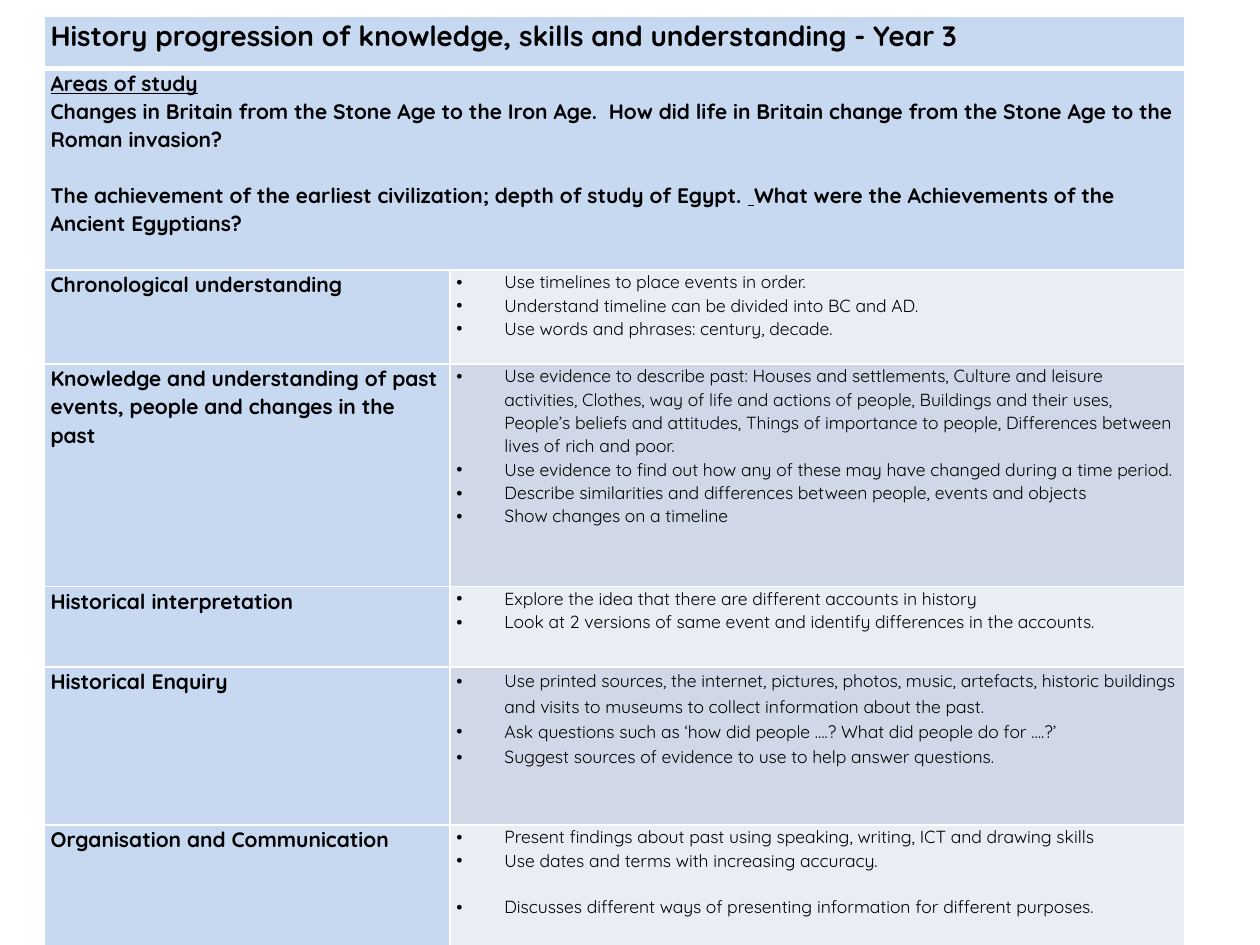
from lxml.etree import SubElement
from pptx import Presentation
from pptx.dml.color import RGBColor
from pptx.enum.text import MSO_ANCHOR, PP_ALIGN
from pptx.oxml.ns import qn
from pptx.util import Cm, Pt

COLORS = {"head": "C6D9F1", "light": "E9EDF4", "dark": "D0D8E8",
          "text": "000000", "line": "FFFFFF"}
COLS = [8.18, 14.81]
ROWS = [1.05, 4.06, 1.9, 4.48, 1.63, 3.18, 2.44]

TITLE = "History progression of knowledge, skills and understanding - Year 3"
AREAS = [
    ([("Areas of study", True)], 0),
    ([("Changes in Britain from the Stone Age to the Iron Age.  How did life in Britain "
       "change from the Stone Age to the Roman invasion?", False)], 0),
    ([("The achievement of the earliest civilization; depth of study of Egypt. ", False),
      (" ", True),
      ("What were the Achievements of the Ancient Egyptians?", False)], 16),
]
SKILLS = [
    ("Chronological understanding", [
        "Use timelines to place events in order.",
        "Understand timeline can be divided into BC and AD.",
        "Use words and phrases: century, decade."], {}),
    ("Knowledge and understanding of past events, people and changes in the past", [
        "Use evidence to describe past: Houses and settlements, Culture and leisure "
        "activities, Clothes, way of life and actions of people, Buildings and their uses, "
        "People’s beliefs and attitudes, Things of importance to people, Differences "
        "between lives of rich and poor.",
        "Use evidence to find out how any of these may have changed during a time period.",
        "Describe similarities and differences between people, events and objects",
        "Show changes on a timeline"], {}),
    ("Historical interpretation", [
        "Explore the idea that there are different accounts in history",
        "Look at 2 versions of same event and identify differences in the accounts."], {}),
    ("Historical Enquiry", [
        "Use printed sources, the internet, pictures, photos, music, artefacts, historic "
        "buildings and visits to museums to collect information about the past.",
        "Ask questions such as ‘how did people ….? What did people do for ….?’",
        "Suggest sources of evidence to use to help answer questions."],
        {"line_spacing": Pt(14.4)}),
    ("Organisation and Communication", [
        "Present findings about past using speaking, writing, ICT and drawing skills",
        "Use dates and terms with increasing accuracy.",
        "Discusses different ways of presenting information for different purposes."],
        {"gaps": {2: 13.4}}),
]


class Page:
    face = "Quicksand"
    pad = {"margin_left": Cm(0.13), "margin_right": Cm(0.13), "margin_top": 0,
           "margin_bottom": 0, "vertical_anchor": MSO_ANCHOR.TOP}

    def __init__(self, slide):
        self.slide = slide

    def apply(self, item, values):
        for name, value in values.items():
            setattr(item, name, value)

    def grid(self, left, top, cols, rows):
        frame = self.slide.shapes.add_table(len(rows), len(cols), Cm(left), Cm(top),
                                            Cm(sum(cols)), Cm(sum(rows)))
        table = frame.table
        self.apply(table, {"first_row": False, "horz_banding": False})
        for col, width in zip(table.columns, cols):
            col.width = Cm(width)
        for row, height in zip(table.rows, rows):
            row.height = Cm(height)
        return table

    def cell(self, cell, fill, top=1, bottom=1):
        self.apply(cell, self.pad)
        props = cell._tc.get_or_add_tcPr()
        for side, width in (("L", 1), ("R", 1), ("T", top), ("B", bottom)):
            line = SubElement(props, qn(f"a:ln{side}"), w=str(Pt(width)))
            paint = SubElement(line, qn("a:solidFill"))
            SubElement(paint, qn("a:srgbClr"), val=COLORS["line"])
        cell.fill.solid()
        cell.fill.fore_color.rgb = RGBColor.from_string(COLORS[fill])

    def para(self, cell, first, runs, size, bold=True, **form):
        frame = cell.text_frame
        para = frame.paragraphs[0] if first else frame.add_paragraph()
        self.apply(para, {"alignment": PP_ALIGN.LEFT, "line_spacing": 1.07,
                          "space_before": 0, "space_after": 0, **form})
        for text, under in runs:
            run = para.add_run()
            run.text = text
            self.apply(run.font, {"name": self.face, "size": Pt(size),
                                  "bold": bold, "underline": under})
            run.font.color.rgb = RGBColor.from_string(COLORS["text"])
        return para

    def bullets(self, cell, lines, gaps=None, **form):
        for i, text in enumerate(lines):
            space = Pt((gaps or {}).get(i, 0))
            para = self.para(cell, i == 0, [(text, False)], 10, False,
                             space_before=space, **form)
            props = para._p.get_or_add_pPr()
            props.set("marL", str(Cm(0.97)))
            props.set("indent", str(-Cm(0.97)))
            SubElement(props, qn("a:buFont"), typeface="Arial")
            SubElement(props, qn("a:buChar"), char="•")


def main():
    deck = Presentation()
    deck.slide_width, deck.slide_height = Cm(25.4), Cm(19.05)
    page = Page(deck.slides.add_slide(deck.slide_layouts[6]))
    table = page.grid(0.89, 0.33, COLS, ROWS)

    for row, rule in enumerate(({"bottom": 3}, {"top": 3})):
        table.cell(row, 0).merge(table.cell(row, 1))
        for col in range(2):
            page.cell(table.cell(row, col), "head", **rule)
    page.para(table.cell(0, 0), True, [(TITLE, False)], 16)
    for i, (runs, gap) in enumerate(AREAS):
        page.para(table.cell(1, 0), i == 0, runs, 12, space_before=Pt(gap))

    for row, (name, lines, form) in enumerate(SKILLS, 2):
        label, body = table.cell(row, 0), table.cell(row, 1)
        page.cell(label, "head")
        page.para(label, True, [(name, False)], 12)
        page.cell(body, "dark" if row % 2 else "light")
        page.bullets(body, lines, **form)

    deck.save("out.pptx")


if __name__ == "__main__":
    main()
